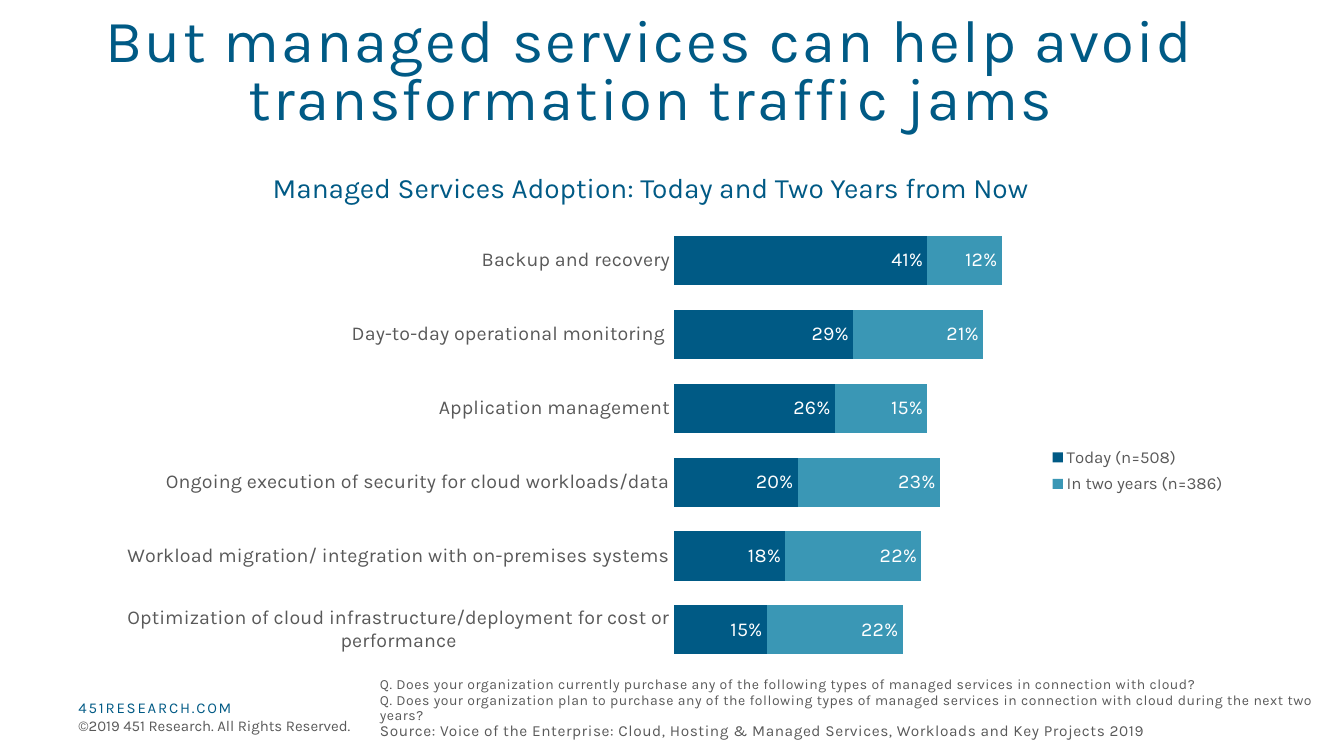
from lxml import etree
from pptx import Presentation
from pptx.chart.data import CategoryChartData
from pptx.dml.color import RGBColor
from pptx.enum import chart as kinds, text
from pptx.oxml import parse_xml
from pptx.oxml.ns import nsdecls, qn
from pptx.util import Inches, Pt

FONT = "Karla"
NAVY, TEAL, GRAY, WHITE = "005A85", "3A97B5", "595959", "FFFFFF"
PERCENT = "###0%"
SERVICES = [
    ("Backup and recovery", 0.41, 0.12),
    ("Day-to-day operational monitoring ", 0.29, 0.21),
    ("Application management", 0.26, 0.15),
    ("Ongoing execution of security for cloud workloads/data", 0.20, 0.23),
    ("Workload migration/ integration with on-premises systems", 0.18, 0.22),
    ("Optimization of cloud infrastructure/deployment for cost or performance", 0.15, 0.22),
]


def color(value):
    return RGBColor.from_string(value)


def style(font, size, value):
    font.name = FONT
    font.size = Pt(size)
    font.color.rgb = color(value)


def add_text(page, box, lines, align=None, spacing=None, anchor=text.MSO_ANCHOR.TOP):
    """Each line is (wording, size, colour, letter spacing in points)."""
    frame = page.shapes.add_textbox(*map(Inches, box)).text_frame
    frame.word_wrap = True
    frame.vertical_anchor = anchor
    for index, (wording, size, value, tracking) in enumerate(lines):
        para = frame.add_paragraph() if index else frame.paragraphs[0]
        para.alignment = align
        para.line_spacing = spacing
        span = para.add_run()
        span.text = wording
        style(span.font, size, value)
        span.font._element.set("spc", str(round(tracking * 100)))


def manual_layout(x, y, width, height, inner=False):
    """Layout element in fractions of the chart area."""
    target = '<c:layoutTarget val="inner"/>' if inner else ""
    layout = parse_xml(
        f'<c:layout {nsdecls("c")}><c:manualLayout>{target}'
        '<c:xMode val="edge"/><c:yMode val="edge"/></c:manualLayout></c:layout>')
    for tag, value in zip("xywh", (x, y, width, height)):
        etree.SubElement(layout[0], qn(f"c:{tag}")).set("val", str(value))
    return layout


def add_adoption_chart(page, box):
    data = CategoryChartData(number_format=PERCENT)
    names, today, later = zip(*SERVICES)
    data.categories = names
    data.add_series("Today (n=508)", today)
    data.add_series("In two years (n=386)", later)
    chart = page.shapes.add_chart(
        kinds.XL_CHART_TYPE.BAR_STACKED, *map(Inches, box), data).chart
    style(chart.font, 11, GRAY)
    chart.has_title = False

    plot = chart.plots[0]
    plot.gap_width, plot.overlap = 50, 100
    plot.vary_by_categories = False
    for series, fill in zip(plot.series, (NAVY, TEAL)):
        series.format.fill.solid()
        series.format.fill.fore_color.rgb = color(fill)
        labels = series.data_labels
        labels.show_value = True
        labels.position = kinds.XL_LABEL_POSITION.INSIDE_END
        labels.number_format = PERCENT
        labels.number_format_is_linked = False
        style(labels.font, 14, WHITE)

    services = chart.category_axis
    services.reverse_order = True
    services.major_tick_mark = kinds.XL_TICK_MARK.NONE
    services.format.line.fill.background()
    style(services.tick_labels.font, 14, GRAY)
    shares = chart.value_axis
    shares.minimum_scale, shares.maximum_scale = 0, 0.6
    shares.has_major_gridlines = False
    shares.tick_label_position = kinds.XL_TICK_LABEL_POSITION.NONE
    shares.format.line.fill.background()

    chart.has_legend = True
    legend = chart.legend
    legend.position = kinds.XL_LEGEND_POSITION.BOTTOM
    legend.include_in_layout = False
    style(legend.font, 12, GRAY)
    for parent, layout in (
        (legend._element, manual_layout(0.8, 0.45, 0.17, 0.12)),
        (plot._element.getparent(), manual_layout(0.495, 0.014, 0.312, 0.89, True)),
    ):
        for default in parent.findall(qn("c:layout")):
            parent.remove(default)
        place = 1 if parent is legend._element else 0
        parent.insert(place, layout)


def add_headings(page):
    center = text.PP_ALIGN.CENTER
    add_text(page, (-0.21, 0.12, 13.33, 0.66), [
        ("But managed services can help avoid transformation traffic jams", 42.7, NAVY, 1.5),
    ], center, 0.8)
    add_text(page, (2.33, 1.64, 8.25, 0.44), [
        ("Managed Services Adoption: Today and Two Years from Now", 20, NAVY, 0),
    ], center)


def add_footer(page):
    add_text(page, (0.68, 6.88, 3.84, 0.46), [
        ("451RESEARCH.COM", 10.7, NAVY, 1.3),
        ("©2019 451 Research. All Rights Reserved.", 10.7, GRAY, 0),
    ])
    add_text(page, (3.67, 6.8, 9.6, 0.59), [
        ("Q. Does your organization currently purchase any of the following types of "
         "managed services in connection with cloud?", 10, GRAY, 0.4),
        ("Q. Does your organization plan to purchase any of the following types of managed "
         "services in connection with cloud during the next two years?", 10, GRAY, 0.4),
        ("Source: Voice of the Enterprise: Cloud, Hosting & Managed Services, "
         "Workloads and Key Projects 2019", 11, GRAY, 0.4),
    ], spacing=0.9, anchor=text.MSO_ANCHOR.BOTTOM)


def main():
    deck = Presentation()
    deck.slide_width, deck.slide_height = Inches(13.33), Inches(7.5)
    page = deck.slides.add_slide(deck.slide_layouts[6])
    add_adoption_chart(page, (0.85, 2.15, 11.79, 4.94))
    add_headings(page)
    add_footer(page)
    deck.save("out.pptx")


if __name__ == "__main__":
    main()
